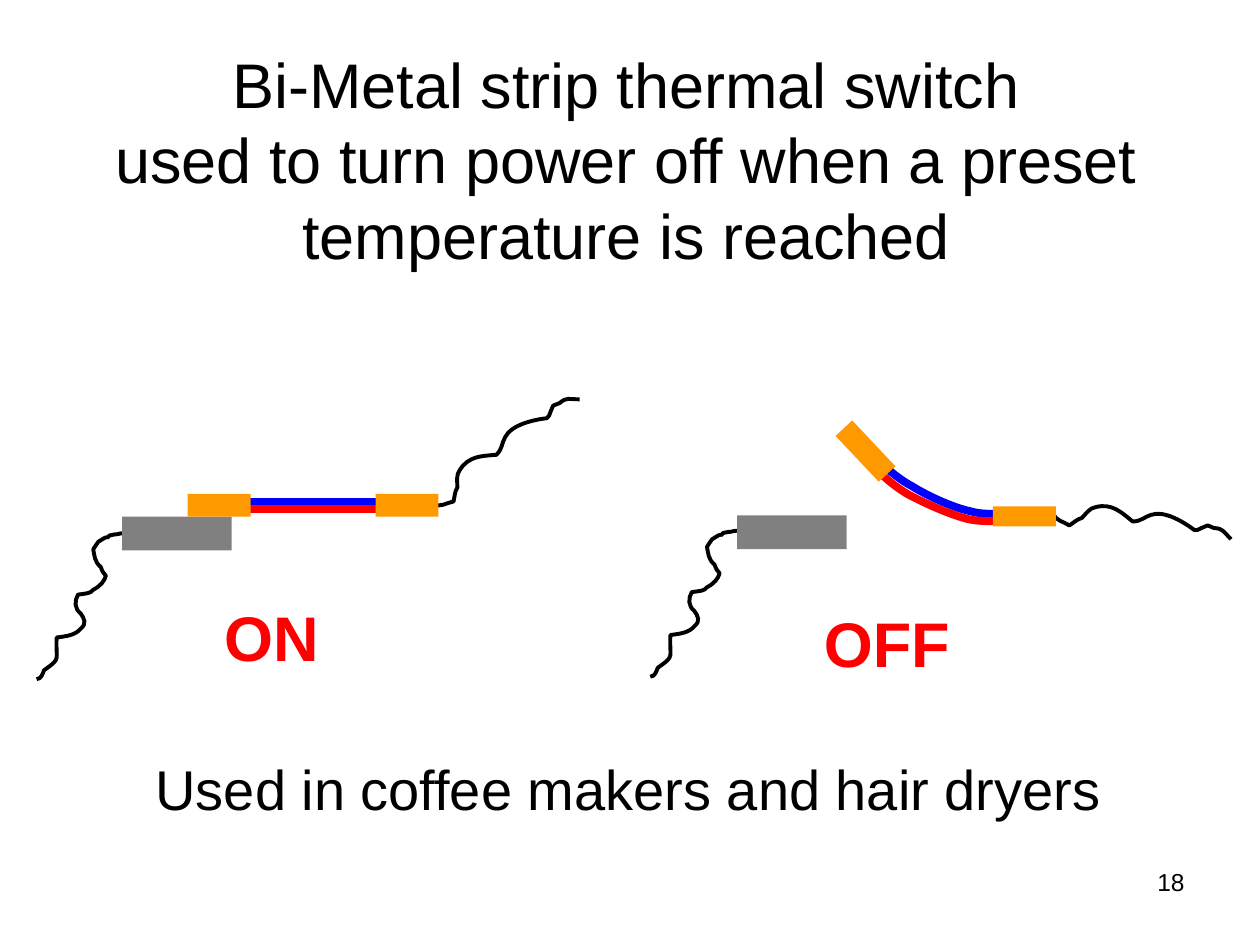
import pptx
import pptx.util
import pptx.dml.color
import pptx.enum.shapes
import pptx.enum.text
import pptx.oxml
import pptx.oxml.ns

Pt = pptx.util.Pt
ALIGN = pptx.enum.text.PP_ALIGN
ANCHOR = pptx.enum.text.MSO_ANCHOR

COLORS = {"black": "000000", "red": "FF0000", "blue": "0000FF",
          "contact": "808080", "terminal": "FF9900"}

TEXTS = [
    ("Bi-Metal strip thermal switch\vused to turn power off when a preset temperature is reached",
     (33.8, 11.5, 648, 158.4),
     {"size": 36}, "black", ALIGN.CENTER, {"vertical_anchor": ANCHOR.MIDDLE, "word_wrap": True}),
    ("Used in coffee makers and hair dryers", (79.9, 427.7, 558.7, 46.1),
     {"size": 32}, "black", ALIGN.CENTER, {"word_wrap": False}),
    ("18", (516.2, 491.8, 167.8, 37.4),
     {"size": 14}, "black", ALIGN.RIGHT, {"word_wrap": True}),
]

SUPPLY_WIRE = [
    (247.7, 288), (252, 290.2), (254.9, 287.3), (259.2, 286.6),
    (259.9, 283.7), (259.9, 280.8), (261.4, 278.6),
    (261.4, 275), (260.6, 271.4), (262.8, 268.6),
    (267.8, 260.6), (275, 260.6), (283.7, 259.9),
    (287.3, 256.3), (286.6, 253.4), (288.7, 249.8),
    (292.3, 242.6), (305.3, 239.8), (312.5, 239),
    (313.2, 238.3), (314.6, 236.9), (314.6, 235.4),
    (315.4, 234), (315.4, 233.3), (316.1, 231.8),
    (316.8, 231.1), (319, 231.1), (319.7, 230.4),
    (324, 226.8), (324.7, 228.2), (331.2, 228.2),
]
CONTACT_WIRE = [
    (74.9, 304.6), (72, 304.6), (69.1, 304.6), (67, 305.3),
    (65.5, 305.3), (62.6, 306), (62.6, 306),
    (59.8, 308.9), (63.4, 306), (59.8, 307.4),
    (58.3, 308.2), (57.6, 308.9), (56.2, 309.6),
    (55.4, 311), (54, 312.5), (53.3, 313.9),
    (54, 317.5), (54, 321.1), (57.6, 324),
    (59, 327.6), (58.3, 326.2), (60.5, 329),
    (59.8, 331.9), (57.6, 334.8), (53.3, 337),
    (51.8, 339.1), (49.7, 339.1), (44.6, 339.8),
    (42.5, 343.4), (42.5, 347.8), (46.1, 350.6),
    (48.2, 353.5), (49.7, 356.4), (46.1, 359.3),
    (43.2, 362.9), (38.2, 363.6), (32.4, 364.3),
    (31.7, 378), (35.3, 375.8), (25.2, 383),
    (24.5, 384.5), (23.8, 388.1), (20.9, 388.1),
]
BENT_BLUE = [
    (582.5, 292.3), (578.2, 292.3), (565.2, 295.2), (555.1, 292.3),
    (545, 290.2), (530.6, 283.7), (521.3, 277.9),
    (511.9, 272.9), (505.4, 266.4), (499.7, 260.6),
]
BENT_RED = [
    (583.2, 296.6), (573.1, 297.4), (563, 298.8), (553, 296.6),
    (542.2, 293.8), (527.8, 287.3), (518.4, 282.2),
    (509, 276.5), (503.3, 270.7), (496.8, 264.2),
]

SWITCHES = [
    {"label": ("ON", (121, 338.4, 68.4, 50.4)),
     "wires": [(SUPPLY_WIRE, (0, 0), 0), (CONTACT_WIRE, (0, 0), 0)],
     "strips": [("red", [(223.9, 290.9), (131.8, 290.9)]),
                ("blue", [(223.9, 286.6), (132.5, 286.6)])],
     "blocks": [("contact", (69.8, 295.2, 62.6, 19.4), 0),
                ("terminal", (107.3, 282.2, 36, 13), 0),
                ("terminal", (214.6, 282.2, 36, 13), 0)]},
    {"label": ("OFF", (463.7, 342, 86.4, 50.4)),
     "wires": [(SUPPLY_WIRE, (362.9, 42.5), 43.9), (CONTACT_WIRE, (350.7, -1.4), 0)],
     "strips": [("blue", BENT_BLUE), ("red", BENT_RED)],
     "blocks": [("contact", (421.2, 294.5, 62.6, 19.4), 0),
                ("terminal", (476.6, 251.3, 36, 13), 46.7),
                ("terminal", (567.4, 289.4, 36, 11.5), 0)]},
]


def color(name):
    return pptx.dml.color.RGBColor.from_string(COLORS[name])


def add_text(shapes, text, box, font_format, color_name, alignment, frame_format):
    frame = shapes.add_textbox(*map(Pt, box)).text_frame
    for name, value in frame_format.items():
        setattr(frame, name, value)
    paragraph = frame.paragraphs[0]
    paragraph.text = text
    paragraph.alignment = alignment
    for run in paragraph.runs:
        for name, value in {**font_format, "size": Pt(font_format["size"]), "name": "Arial"}.items():
            setattr(run.font, name, value)
        run.font.color.rgb = color(color_name)


def style_line(shape, color_name, width):
    shape.line.color.rgb = color(color_name)
    shape.line.width = Pt(width)


def add_curve(shapes, points, color_name, width, offset=(0, 0), rotation=0):
    start, *rest = [(Pt(x + offset[0]), Pt(y + offset[1])) for x, y in points]
    builder = shapes.build_freeform(*start, scale=1.0)
    builder.add_line_segments(rest, close=False)
    shape = builder.convert_to_shape()
    segments = list(shape.element.iter(pptx.oxml.ns.qn("a:lnTo")))
    for first, second, third in zip(segments[::3], segments[1::3], segments[2::3]):
        bezier = pptx.oxml.parse_xml(f'<a:cubicBezTo {pptx.oxml.ns.nsdecls("a")}/>')
        first.addprevious(bezier)
        for segment in (first, second, third):
            bezier.append(segment[0])
            segment.getparent().remove(segment)
    shape.shadow.inherit = False
    shape.fill.background()
    shape.rotation = rotation
    style_line(shape, color_name, width)


def add_straight(shapes, points, color_name, width):
    start, end = points
    connector = shapes.add_connector(
        pptx.enum.shapes.MSO_CONNECTOR.STRAIGHT, *map(Pt, start + end))
    style_line(connector, color_name, width)
    connector.element.spPr.append(
        pptx.oxml.parse_xml(f'<a:effectLst {pptx.oxml.ns.nsdecls("a")}/>'))


def add_block(shapes, color_name, box, rotation):
    block = shapes.add_shape(pptx.enum.shapes.MSO_SHAPE.RECTANGLE, *map(Pt, box))
    block.shadow.inherit = False
    block.fill.solid()
    block.fill.fore_color.rgb = color(color_name)
    block.line.fill.background()
    block.rotation = rotation


def add_switch(slide, switch):
    shapes = slide.shapes.add_group_shape().shapes
    add_text(shapes, *switch["label"], {"size": 36, "bold": True}, "red",
             ALIGN.LEFT, {"word_wrap": False})
    for points, offset, rotation in switch["wires"]:
        add_curve(shapes, points, "black", 2.25, offset, rotation)
    for color_name, points in switch["strips"]:
        add_strip = add_straight if len(points) == 2 else add_curve
        add_strip(shapes, points, color_name, 4.5)
    for block in switch["blocks"]:
        add_block(shapes, *block)


def main():
    presentation = pptx.Presentation()
    presentation.slide_width, presentation.slide_height = Pt(720), Pt(540)
    slide = presentation.slides.add_slide(presentation.slide_layouts[6])
    for text in TEXTS:
        add_text(slide.shapes, *text)
    for switch in SWITCHES:
        add_switch(slide, switch)
    presentation.save("out.pptx")


if __name__ == "__main__":
    main()
